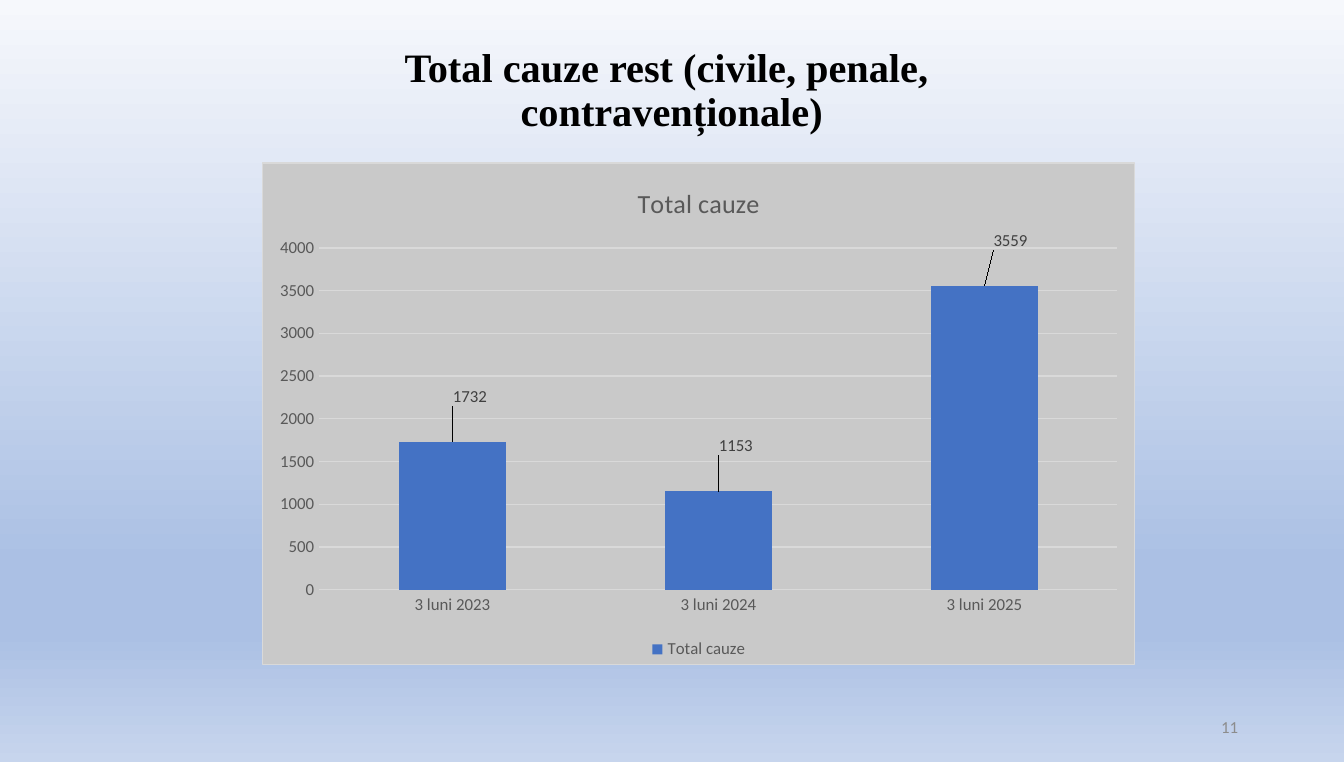
from dataclasses import dataclass

from lxml import etree
from pptx import Presentation
from pptx.chart.data import CategoryChartData
from pptx.dml.color import RGBColor
from pptx.enum.chart import XL_CHART_TYPE, XL_LABEL_POSITION, XL_LEGEND_POSITION, XL_TICK_MARK
from pptx.enum.text import MSO_ANCHOR, MSO_AUTO_SIZE, PP_ALIGN
from pptx.oxml import parse_xml
from pptx.util import Cm, Pt

COLUMNS = XL_CHART_TYPE.COLUMN_CLUSTERED
OUTSIDE_END = XL_LABEL_POSITION.OUTSIDE_END
LEGEND_BOTTOM = XL_LEGEND_POSITION.BOTTOM
NO_TICK = XL_TICK_MARK.NONE
MIDDLE = MSO_ANCHOR.MIDDLE
NO_AUTOFIT = MSO_AUTO_SIZE.NONE
CENTER, RIGHT = PP_ALIGN.CENTER, PP_ALIGN.RIGHT

BLACK = RGBColor(0x00, 0x00, 0x00)
PAGE_GREY = RGBColor(0x8C, 0x8C, 0x8C)
AXIS_GREY = RGBColor(0x59, 0x59, 0x59)
LABEL_GREY = RGBColor(0x40, 0x40, 0x40)
GRID_GREY = RGBColor(0xD9, 0xD9, 0xD9)
PANEL_GREY = RGBColor(0xC9, 0xC9, 0xC9)
COLUMN_BLUE = RGBColor(0x44, 0x72, 0xC4)
SKY_STOPS = (
    (0, RGBColor(0xF6, 0xF8, 0xFC)),
    (74, RGBColor(0xAB, 0xC0, 0xE4)),
    (83, RGBColor(0xAB, 0xC0, 0xE4)),
    (100, RGBColor(0xC7, 0xD5, 0xED)),
)

SANS, SERIF = "Calibri", "Times New Roman"
SERIES_NAME = "Total cauze"
A = "http://schemas.openxmlformats.org/drawingml/2006/main"
C = "http://schemas.openxmlformats.org/drawingml/2006/chart"


@dataclass(frozen=True)
class Period:
    name: str
    cases: int
    label_dx: float
    label_dy: float


PERIODS = (
    Period("3 luni 2023", 1732, 0.02, -0.06),
    Period("3 luni 2024", 1153, 0.02, -0.06),
    Period("3 luni 2025", 3559, 0.03, -0.06),
)


def style_font(font, size: float, color: RGBColor, face: str = SANS, bold: bool = False) -> None:
    font.size = Pt(size)
    font.name = face
    font.bold = bold
    font.color.rgb = color


def place(shape, left: float, top: float, width: float, height: float) -> None:
    shape.left, shape.top = Cm(left), Cm(top)
    shape.width, shape.height = Cm(width), Cm(height)


def paint_background(slide) -> None:
    fill = slide.background.fill
    fill.gradient()
    fill.gradient_angle = 270
    stop_list = slide.element.find(f".//{{{A}}}gsLst")
    for stop in list(stop_list):
        stop_list.remove(stop)
    for percent, color in SKY_STOPS:
        stop = etree.SubElement(stop_list, f"{{{A}}}gs", pos=str(percent * 1000))
        etree.SubElement(stop, f"{{{A}}}srgbClr", val=str(color))


def add_heading(slide) -> None:
    heading = slide.shapes.title
    place(heading, 1.75, 0.76, 21.89, 2.79)
    frame = heading.text_frame
    frame.text = "Total cauze rest (civile, penale, \vcontravenționale)"
    frame.auto_size = NO_AUTOFIT
    frame.word_wrap = True
    frame.vertical_anchor = MIDDLE
    frame.margin_bottom = Cm(0.97)
    paragraph = frame.paragraphs[0]
    paragraph.alignment = CENTER
    paragraph.line_spacing = 0.9
    for run in paragraph.runs:
        style_font(run.font, 21.6, BLACK, SERIF, True)


def add_page_number(slide) -> None:
    page = slide.shapes.add_textbox(Cm(17.93), Cm(13.36), Cm(5.72), Cm(0.76))
    frame = page.text_frame
    frame.text = "11"
    frame.word_wrap = True
    frame.vertical_anchor = MIDDLE
    paragraph = frame.paragraphs[0]
    paragraph.alignment = RIGHT
    style_font(paragraph.runs[0].font, 9, PAGE_GREY)


def paint_panel(chart) -> None:
    chart.element.find(f"{{{C}}}chart").addnext(parse_xml(
        f'<c:spPr xmlns:c="{C}" xmlns:a="{A}">'
        f'<a:solidFill><a:srgbClr val="{PANEL_GREY}"/></a:solidFill>'
        f'<a:ln w="{Pt(0.75)}"><a:solidFill><a:srgbClr val="{GRID_GREY}"/></a:solidFill></a:ln>'
        '</c:spPr>'
    ))


def style_axis(axis) -> None:
    axis.major_tick_mark = axis.minor_tick_mark = NO_TICK
    axis.format.line.fill.background()
    style_font(axis.tick_labels.font, 9, AXIS_GREY)


def shift_label(label_xml, period: Period) -> None:
    label_xml.find(f"{{{C}}}idx").addnext(parse_xml(
        f'<c:layout xmlns:c="{C}"><c:manualLayout>'
        f'<c:x val="{period.label_dx}"/><c:y val="{period.label_dy}"/>'
        '</c:manualLayout></c:layout>'
    ))


def style_columns(plot) -> None:
    plot.gap_width = 150
    plot.vary_by_categories = False
    columns = plot.series[0]
    columns.format.fill.solid()
    columns.format.fill.fore_color.rgb = COLUMN_BLUE
    labels = columns.data_labels
    labels.show_value = True
    labels.position = OUTSIDE_END
    style_font(labels.font, 9, LABEL_GREY)
    for index in range(len(PERIODS)):
        label = columns.points[index].data_label
        label.position = OUTSIDE_END
        style_font(label.font, 9, LABEL_GREY)
    for label_xml, period in zip(plot._element.iter(f"{{{C}}}dLbl"), PERIODS):
        shift_label(label_xml, period)


def add_case_chart(slide) -> None:
    data = CategoryChartData()
    data.categories = [period.name for period in PERIODS]
    data.add_series(SERIES_NAME, [period.cases for period in PERIODS])
    chart = slide.shapes.add_chart(COLUMNS, Cm(4.95), Cm(3.07), Cm(16.51), Cm(9.5), data).chart
    style_font(chart.font, 10, BLACK)
    paint_panel(chart)

    chart.has_title = True
    chart_title = chart.chart_title.text_frame
    chart_title.text = SERIES_NAME
    style_font(chart_title.paragraphs[0].runs[0].font, 14, AXIS_GREY)
    chart.chart_title.include_in_layout = False

    chart.has_legend = True
    chart.legend.position = LEGEND_BOTTOM
    chart.legend.include_in_layout = False
    style_font(chart.legend.font, 9, AXIS_GREY)

    style_axis(chart.category_axis)
    values = chart.value_axis
    style_axis(values)
    values.minimum_scale, values.maximum_scale, values.major_unit = 0, 4000, 500
    grid = values.major_gridlines.format.line
    grid.color.rgb = GRID_GREY
    grid.width = Pt(0.75)
    style_columns(chart.plots[0])


def main() -> None:
    deck = Presentation()
    deck.slide_width, deck.slide_height = Cm(25.4), Cm(14.4)
    slide = deck.slides.add_slide(deck.slide_layouts.get_by_name("Title Only"))
    paint_background(slide)
    add_heading(slide)
    add_page_number(slide)
    add_case_chart(slide)
    deck.save("out.pptx")


if __name__ == "__main__":
    main()
